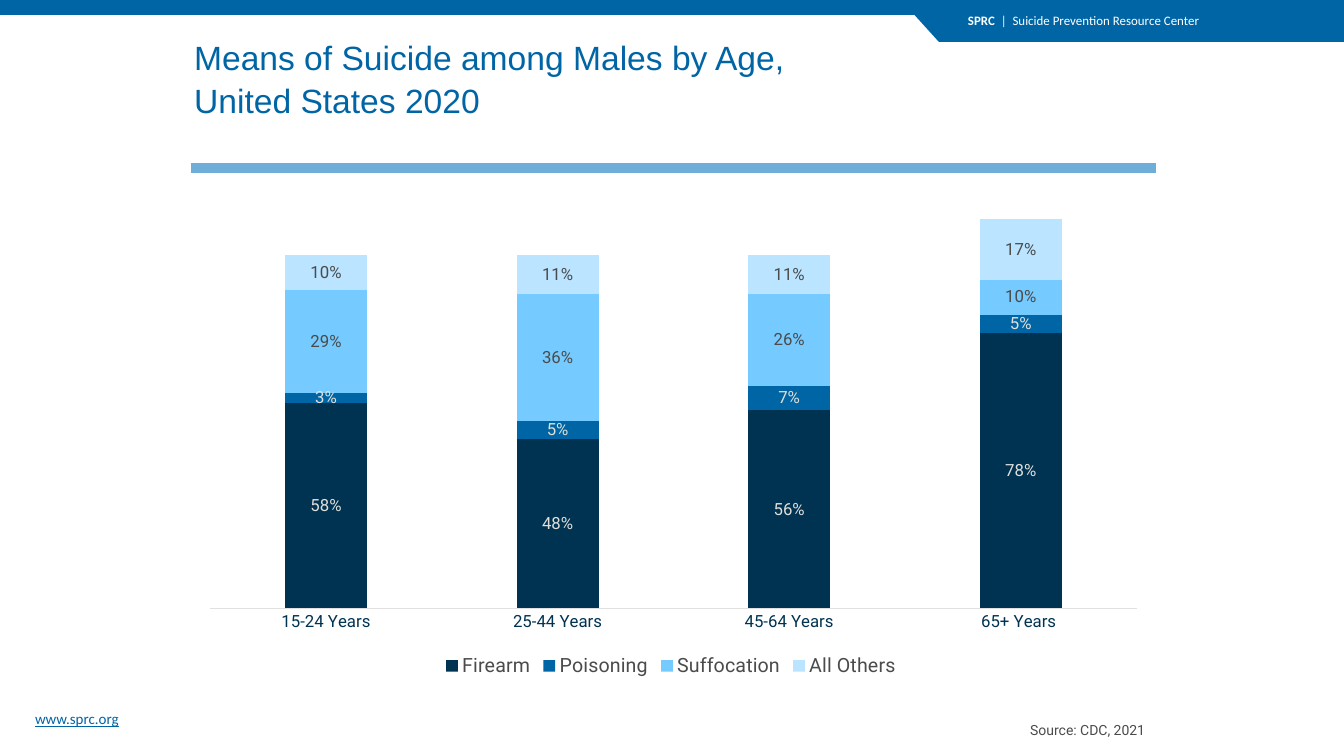
from dataclasses import dataclass

from lxml import etree
from pptx import Presentation
from pptx import util as u
from pptx.chart.data import CategoryChartData
from pptx.dml.color import RGBColor
from pptx.enum import chart as charts, shapes, text
from pptx.oxml import parse_xml
from pptx.oxml.ns import nsdecls, qn

SCALE = 914400 / 100.8


def px(length):
    return u.Emu(round(length * SCALE))


@dataclass(frozen=True)
class Theme:
    white: str = "FFFFFF"
    brand: str = "0065A4"
    title: str = "0065A5"
    rule: str = "6FAED9"
    navy: str = "003352"
    sky: str = "75CAFF"
    pale: str = "BAE4FF"
    grey: str = "4B4B4B"
    light: str = "E0DFDA"
    axis: str = "E1E1E1"
    title_font: str = "Arial"
    banner_font: str = "Calibri"
    chart_font: str = "Roboto"
    title_size: float = 24
    banner_size: float = 9.2
    link_size: float = 10.7
    source_size: float = 10
    label_size: float = 12
    legend_size: float = 14
    rule_width: float = 7.75


THEME = Theme()
AGES = ["15-24 Years", "25-44 Years", "45-64 Years", "65+ Years "]
# name, share by age, fill, label colour
MEANS = [
    ("Firearm", (0.58, 0.48, 0.56, 0.78), THEME.navy, THEME.light),
    ("Poisoning", (0.03, 0.05, 0.07, 0.05), THEME.brand, THEME.light),
    ("Suffocation", (0.29, 0.36, 0.26, 0.10), THEME.sky, THEME.grey),
    ("All Others ", (0.10, 0.11, 0.11, 0.17), THEME.pale, THEME.grey),
]


def color(code):
    return RGBColor.from_string(code)


def style(font, name, size, code):
    font.name = name
    font.size = u.Pt(size)
    font.color.rgb = color(code)


def add_span(para, words, name, size, code):
    span = para.add_run()
    span.text = words
    style(span.font, name, size, code)
    return span


def add_text_box(page, left, top, width, height):
    box = page.shapes.add_textbox(px(left), px(top), px(width), px(height))
    box.text_frame.word_wrap = True
    return box.text_frame


def paint(shape, code):
    shape.shadow.inherit = False
    shape.fill.solid()
    shape.fill.fore_color.rgb = color(code)
    shape.line.fill.background()


def add_banner(page, left, top, width, height):
    """Top strip with a slanted tab at its right end that names the center."""
    strip = page.shapes.add_shape(shapes.MSO_SHAPE.RECTANGLE,
                                  px(left), px(top), px(width), px(15))
    paint(strip, THEME.brand)
    right, bottom = left + width, top + height
    outline = page.shapes.build_freeform(right, top + 10, scale=SCALE)
    outline.add_line_segments([(right, bottom), (right - 405, bottom),
                               (right - 434, top + 10)], close=True)
    paint(outline.convert_to_shape(), THEME.brand)

    para = add_text_box(page, right - 386, top + 8, 386, 41).paragraphs[0]
    for words, bold in (("SPRC", True),
                        ("  |  Suicide Prevention Resource Center", False)):
        span = add_span(para, words, THEME.banner_font, THEME.banner_size, THEME.white)
        span.font.bold = bold


def add_title(page, left, top, width, height):
    title = page.shapes.title
    title.left, title.top, title.width, title.height = map(px, (left, top, width, height))
    frame = title.text_frame
    frame.auto_size = text.MSO_AUTO_SIZE.NONE
    frame.vertical_anchor = text.MSO_ANCHOR.TOP
    para = frame.paragraphs[0]
    para.alignment = text.PP_ALIGN.LEFT
    para.line_spacing = 1.07
    look = (THEME.title_font, THEME.title_size, THEME.title)
    add_span(para, "Means of Suicide among Males by Age,", *look)
    para.add_line_break()
    add_span(para, "United States 2020", *look)


def add_rule(page, left, top, width):
    rule = page.shapes.add_connector(shapes.MSO_CONNECTOR.STRAIGHT,
                                     px(left), px(top), px(left + width), px(top))
    rule.line.color.rgb = color(THEME.rule)
    rule.line.width = u.Pt(THEME.rule_width)
    etree.SubElement(rule.element.spPr, qn("a:effectLst"))


def fix_plot_area(chart, x, y, width, height):
    """Pin the inner plot area, in fractions of the chart frame."""
    area = chart.element.find(".//" + qn("c:plotArea"))
    for old in area.findall(qn("c:layout")):
        area.remove(old)
    area.insert(0, parse_xml(
        f'<c:layout {nsdecls("c")}><c:manualLayout><c:layoutTarget val="inner"/>'
        '<c:xMode val="edge"/><c:yMode val="edge"/>'
        f'<c:x val="{x}"/><c:y val="{y}"/><c:w val="{width}"/><c:h val="{height}"/>'
        '</c:manualLayout></c:layout>'))


def add_means_chart(page, left, top, width, height):
    data = CategoryChartData(number_format="0%")
    data.categories = AGES
    for name, shares, *_ in MEANS:
        data.add_series(name, shares)
    chart = page.shapes.add_chart(charts.XL_CHART_TYPE.COLUMN_STACKED, px(left), px(top),
                                  px(width), px(height), data).chart
    style(chart.font, THEME.chart_font, THEME.label_size, THEME.grey)
    chart.has_title = False
    chart.has_legend = True
    chart.legend.position = charts.XL_LEGEND_POSITION.BOTTOM
    chart.legend.include_in_layout = False
    style(chart.legend.font, THEME.chart_font, THEME.legend_size, THEME.grey)

    ages, shares = chart.category_axis, chart.value_axis
    ages.major_tick_mark = charts.XL_TICK_MARK.NONE
    ages.format.line.color.rgb = color(THEME.axis)
    ages.format.line.width = u.Pt(0.75)
    style(ages.tick_labels.font, THEME.chart_font, THEME.label_size, THEME.navy)
    shares.visible = False
    shares.has_major_gridlines = False
    shares.minimum_scale, shares.maximum_scale = 0, 1.2

    plot = chart.plots[0]
    plot.gap_width, plot.overlap = 182, 100
    plot.vary_by_categories = False
    for series, (_, _, fill, label) in zip(plot.series, MEANS):
        series.format.fill.solid()
        series.format.fill.fore_color.rgb = color(fill)
        labels = series.data_labels
        labels.show_value = True
        labels.number_format = "0%"
        labels.number_format_is_linked = False
        labels.position = charts.XL_LABEL_POSITION.CENTER
        style(labels.font, THEME.chart_font, THEME.label_size, label)
    fix_plot_area(chart, 0.02, 0.02, 0.96, 0.835)


def add_web_address(page, left, top, width, height):
    frame = add_text_box(page, left, top, width, height)
    frame.margin_left = frame.margin_right = px(13)
    frame.margin_top = frame.margin_bottom = px(7)
    frame.vertical_anchor = text.MSO_ANCHOR.MIDDLE
    span = add_span(frame.paragraphs[0], "www.sprc.org",
                    THEME.banner_font, THEME.link_size, THEME.brand)
    span.font.underline = True


def add_source(page, left, top, width, height):
    frame = add_text_box(page, left, top, width, height)
    frame.word_wrap = False
    para = frame.paragraphs[0]
    para.alignment = text.PP_ALIGN.RIGHT
    add_span(para, "Source: CDC, 2021", THEME.chart_font, THEME.source_size, THEME.grey)


def main():
    deck = Presentation()
    deck.slide_width, deck.slide_height = px(1344), px(756)
    page = deck.slides.add_slide(deck.slide_layouts.get_by_name("Title Only"))
    add_banner(page, 0, 0, 1344, 42)
    add_web_address(page, 22, 703, 657, 32)
    add_title(page, 184, 29, 964, 100)
    add_rule(page, 191, 168, 965)
    add_source(page, 1019, 717, 136, 27)
    add_means_chart(page, 191, 174, 965, 508)
    deck.save("out.pptx")


if __name__ == "__main__":
    main()
